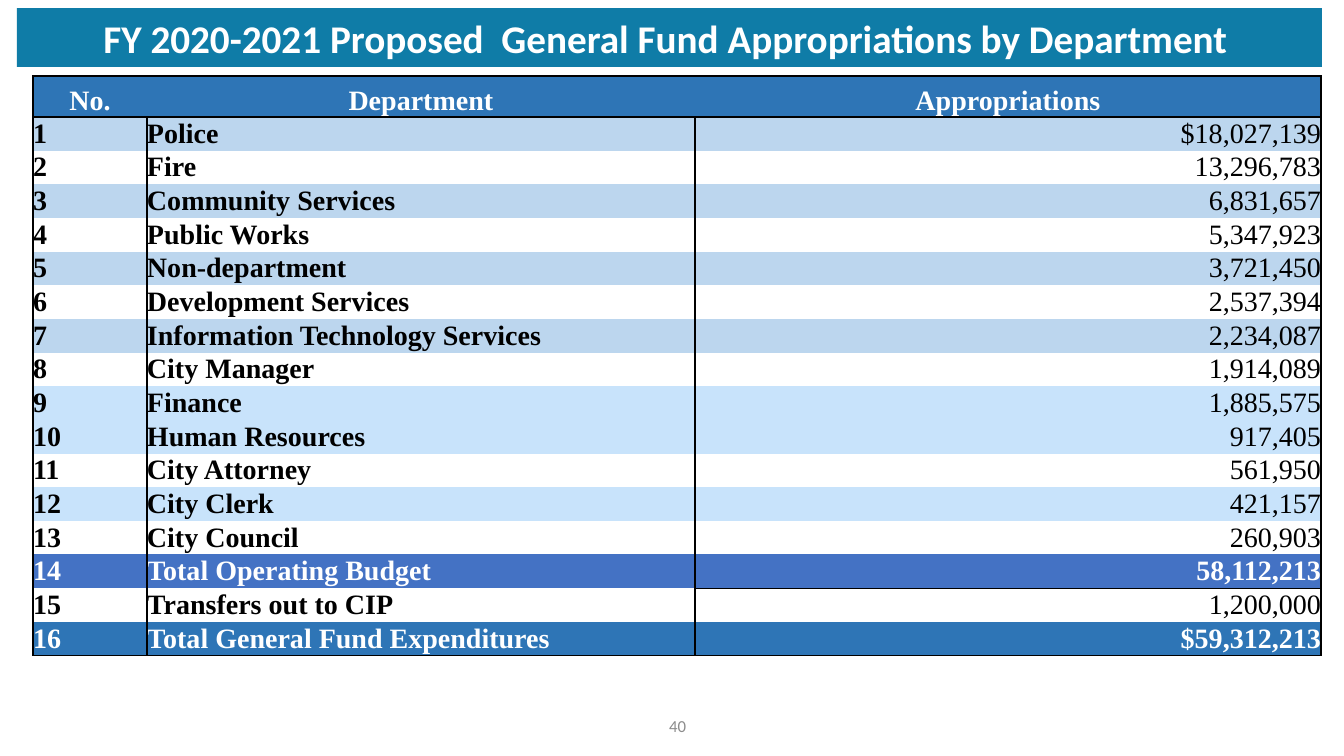
import pptx
import pptx.dml.color
import pptx.enum.text
import pptx.oxml.xmlchemy
import pptx.util
from lxml import etree
from pptx.oxml import ns

PX = 914400 / 100.8
COLORS = {
    "banner": "0F7CA7", "header": "2E75B6", "band": "BCD6EE", "pale": "C8E3FB",
    "subtotal": "4472C4", "white": "FFFFFF", "black": "000000", "number": "8C8C8C",
}
ALIGN = pptx.enum.text.PP_ALIGN
ANCHOR = pptx.enum.text.MSO_ANCHOR
HEADINGS = ("No.", "Department", "Appropriations")
DEPARTMENTS = [
    ("Police", "$18,027,139", "band"),
    ("Fire", "13,296,783", "white"),
    ("Community Services", "6,831,657", "band"),
    ("Public Works", "5,347,923", "white"),
    ("Non-department", "3,721,450", "band"),
    ("Development Services", "2,537,394", "white"),
    ("Information Technology Services", "2,234,087", "band"),
    ("City Manager", "1,914,089", "white"),
    ("Finance", "1,885,575", "pale"),
    ("Human Resources", "917,405", "pale"),
    ("City Attorney", "561,950", "white"),
    ("City Clerk", "421,157", "pale"),
    ("City Council", "260,903", "white"),
    ("Total Operating Budget", "58,112,213", "subtotal"),
    ("Transfers out to CIP", "1,200,000", "white"),
    ("Total General Fund Expenditures", "$59,312,213", "header"),
]


def px(n):
    return pptx.util.Emu(round(n * PX))


def rgb(name):
    return pptx.dml.color.RGBColor.from_string(COLORS[name])


def format_text(p, font, size, color, bold, align):
    p.alignment = align
    p.font.name = font
    p.font.size = pptx.util.Pt(size)
    p.font.bold = bold
    p.font.color.rgb = rgb(color)


def set_borders(cell, widths):
    """Draw the given sides (L, R, T, B) in points; leave the others bare."""
    tcPr = cell._tc.get_or_add_tcPr()
    for side in "LRTB":
        ln = etree.SubElement(tcPr, ns.qn(f"a:ln{side}"))
        if side in widths:
            ln.set("w", str(pptx.util.Pt(widths[side])))
            fill = etree.SubElement(ln, ns.qn("a:solidFill"))
            etree.SubElement(fill, ns.qn("a:srgbClr"), val=COLORS["black"])
        else:
            etree.SubElement(ln, ns.qn("a:noFill"))


def fill_cell(cell, text, fill, color, bold, align, anchor, borders):
    set_borders(cell, borders)
    cell.fill.solid()
    cell.fill.fore_color.rgb = rgb(fill)
    cell.margin_left = cell.margin_right = cell.margin_top = cell.margin_bottom = 0
    cell.vertical_anchor = anchor
    cell.text = text
    format_text(cell.text_frame.paragraphs[0], "Times New Roman", 20, color, bold, align)


def add_banner(slide, x, y, w, h):
    sp = slide.shapes.title
    sp.left, sp.top, sp.width, sp.height = px(x), px(y), px(w), px(h)
    sp.fill.solid()
    sp.fill.fore_color.rgb = rgb("banner")
    tf = sp.text_frame
    tf.text = "FY 2020-2021 Proposed  General Fund Appropriations by Department "
    tf.auto_size = pptx.enum.text.MSO_AUTO_SIZE.NONE
    tf.vertical_anchor = ANCHOR.MIDDLE
    format_text(tf.paragraphs[0], "Calibri", 28, "white", True, ALIGN.CENTER)


def add_budget_table(slide, x, y, w, h):
    last = len(DEPARTMENTS)
    header_h = 41
    table = slide.shapes.add_table(last + 1, 3, px(x), px(y), px(w), px(h)).table
    table.first_row = table.horz_banding = False
    for column, width in zip(table.columns, (114, 548, w - 114 - 548)):
        column.width = px(width)
    for row in table.rows:
        row.height = px((h - header_h) / last)
    table.rows[0].height = px(header_h)

    for col, heading in enumerate(HEADINGS):
        borders = {"T": 1, "B": 1}
        if col == 0:
            borders["L"] = 1
        elif col == 2:
            borders["R"] = 1
        fill_cell(table.cell(0, col), heading, "header", "white", True,
                  ALIGN.CENTER, ANCHOR.BOTTOM, borders)

    for number, (name, amount, fill) in enumerate(DEPARTMENTS, 1):
        is_total = fill in ("subtotal", "header")
        color = "white" if is_total else "black"
        for col, text in enumerate((str(number), name, amount)):
            is_amount = col == 2
            borders = {"L": 1, "R": 1}
            if number == 1:
                borders["T"] = 1
            if number == last:
                borders["B"] = 1
            if is_amount and number == 14:
                borders["B"] = 0.5
            if is_amount and number == 15:
                borders["T"] = 0.5
            fill_cell(table.cell(number, col), text, fill, color,
                      is_total or not is_amount,
                      ALIGN.RIGHT if is_amount else ALIGN.LEFT,
                      ANCHOR.MIDDLE, borders)


def add_page_number(slide, x, y, w, h):
    tf = slide.shapes.add_textbox(px(x), px(y), px(w), px(h)).text_frame
    tf.word_wrap = True
    tf.vertical_anchor = ANCHOR.MIDDLE
    tf.text = "40"
    format_text(tf.paragraphs[0], "Calibri", 12, "number", False, ALIGN.RIGHT)


def main():
    prs = pptx.Presentation()
    prs.slide_width, prs.slide_height = px(1344), px(756)
    slide = prs.slides.add_slide(prs.slide_layouts[5])
    add_banner(slide, 17, 8, 1305, 59)
    add_page_number(slide, 643, 706, 53, 40)
    add_budget_table(slide, 33, 76, 1288, 579)
    prs.save("out.pptx")


if __name__ == "__main__":
    main()
